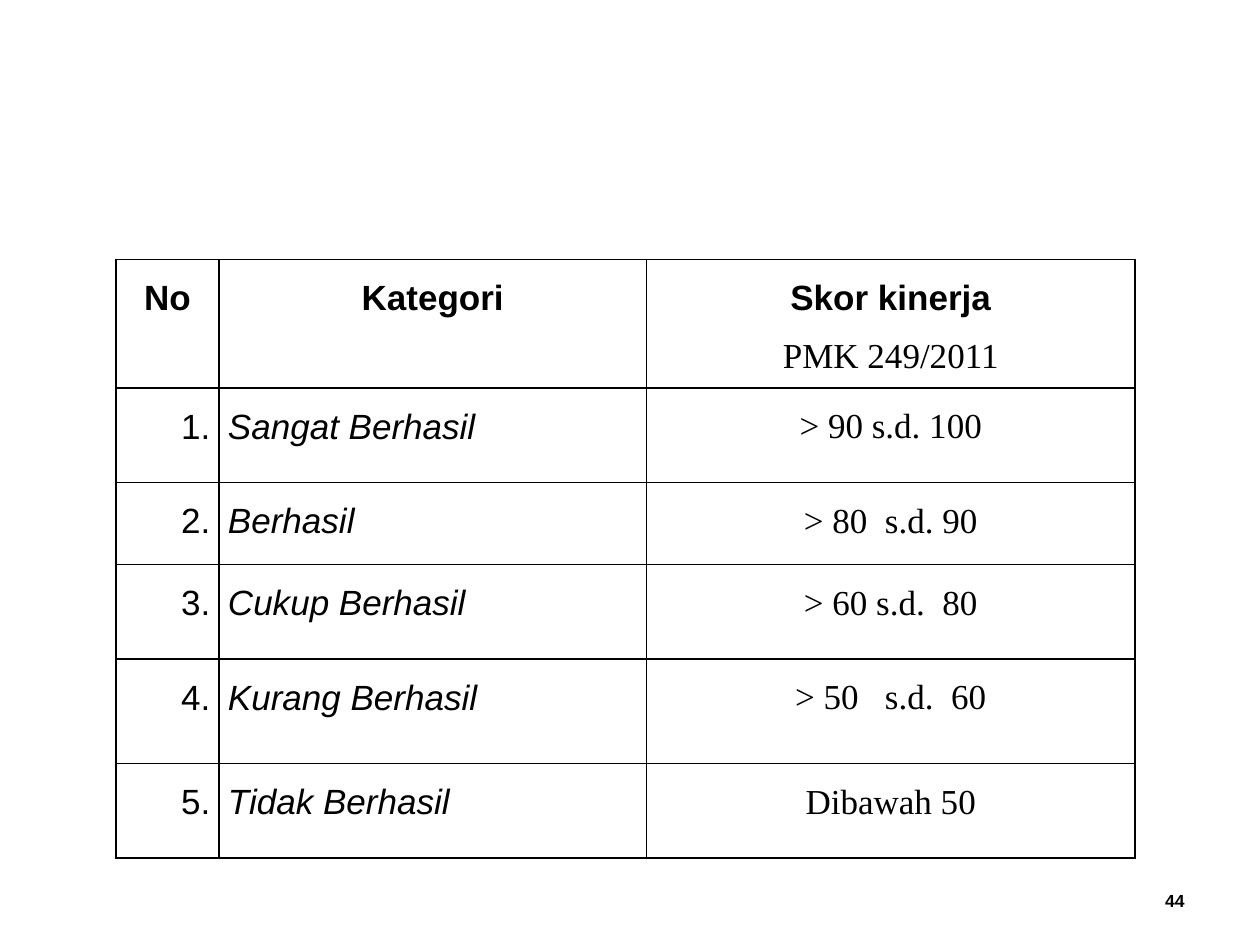
from lxml.etree import SubElement
from pptx import Presentation
from pptx.dml.color import RGBColor
from pptx.enum.text import MSO_ANCHOR as Anchor, PP_ALIGN as Align
from pptx.oxml.ns import qn
from pptx.util import Inches, Pt

COLORS = {"text": "000000", "border": "000000", "cell": "FFFFFF"}
SANS, SERIF = "Arial", "Times New Roman"

COLUMN_WIDTHS = [0.82, 3.39, 3.88]
ROW_HEIGHTS = [1.02, 0.75, 0.65, 0.75, 0.83, 0.75]
SCORES = [
    ("Sangat Berhasil", "> 90 s.d. 100"),
    ("Berhasil", "> 80  s.d. 90"),
    ("Cukup Berhasil", "> 60 s.d.  80"),
    ("Kurang Berhasil", "> 50   s.d.  60"),
    ("Tidak Berhasil", "Dibawah 50"),
]


def add_run(paragraph, text, font=SANS, size=20, bold=False, italic=False):
    run = paragraph.add_run()
    run.text = text
    run.font.name = font
    run.font.size = Pt(size)
    run.font.bold = bold
    run.font.italic = italic
    run.font.color.rgb = RGBColor.from_string(COLORS["text"])


def add_borders(cell):
    properties = cell._tc.get_or_add_tcPr()
    for side in ("a:lnL", "a:lnR", "a:lnT", "a:lnB"):
        line = SubElement(properties, qn(side), w=str(Pt(1)))
        fill = SubElement(line, qn("a:solidFill"))
        SubElement(fill, qn("a:srgbClr"), val=COLORS["border"])


def style_cell(cell):
    cell.margin_left = cell.margin_right = Inches(0.07)
    cell.margin_top = cell.margin_bottom = 0
    add_borders(cell)
    cell.fill.solid()
    cell.fill.fore_color.rgb = RGBColor.from_string(COLORS["cell"])


def write_cell(cell, align, *lines):
    """Write one paragraph per (text, run style) pair."""
    style_cell(cell)
    for index, (text, style) in enumerate(lines):
        frame = cell.text_frame
        paragraph = frame.add_paragraph() if index else frame.paragraphs[0]
        paragraph.alignment = align
        paragraph.line_spacing = 1.5
        add_run(paragraph, text, **style)


def add_score_table(slide):
    frame = slide.shapes.add_table(
        len(ROW_HEIGHTS), len(COLUMN_WIDTHS), Inches(0.92), Inches(2.06),
        Inches(sum(COLUMN_WIDTHS)), Inches(sum(ROW_HEIGHTS)))
    table = frame.table
    for column, width in zip(table.columns, COLUMN_WIDTHS):
        column.width = Inches(width)
    for row, height in zip(table.rows, ROW_HEIGHTS):
        row.height = Inches(height)

    # Header row
    heading, serif = {"bold": True}, {"font": SERIF}
    write_cell(table.cell(0, 0), Align.CENTER, ("No", heading))
    write_cell(table.cell(0, 1), Align.CENTER, ("Kategori", heading))
    write_cell(table.cell(0, 2), Align.CENTER,
               ("Skor kinerja", heading), ("PMK 249/2011", serif))

    # Numbered categories
    for number, (category, score) in enumerate(SCORES, start=1):
        write_cell(table.cell(number, 0), Align.RIGHT, (f"{number}.", {}))
        write_cell(table.cell(number, 1), Align.LEFT, (category, {"italic": True}))
        write_cell(table.cell(number, 2), Align.CENTER, (score, serif))


def add_slide_number(slide, number):
    box = slide.shapes.add_textbox(Inches(7.17), Inches(6.95), Inches(2.33), Inches(0.4))
    frame = box.text_frame
    frame.word_wrap = True
    frame.vertical_anchor = Anchor.MIDDLE
    paragraph = frame.paragraphs[0]
    paragraph.alignment = Align.RIGHT
    add_run(paragraph, number, size=10, bold=True)


def main():
    presentation = Presentation()
    presentation.slide_width = Inches(10)
    presentation.slide_height = Inches(7.5)
    slide = presentation.slides.add_slide(presentation.slide_layouts[6])
    add_slide_number(slide, "44")
    add_score_table(slide)
    presentation.save("out.pptx")


if __name__ == "__main__":
    main()
